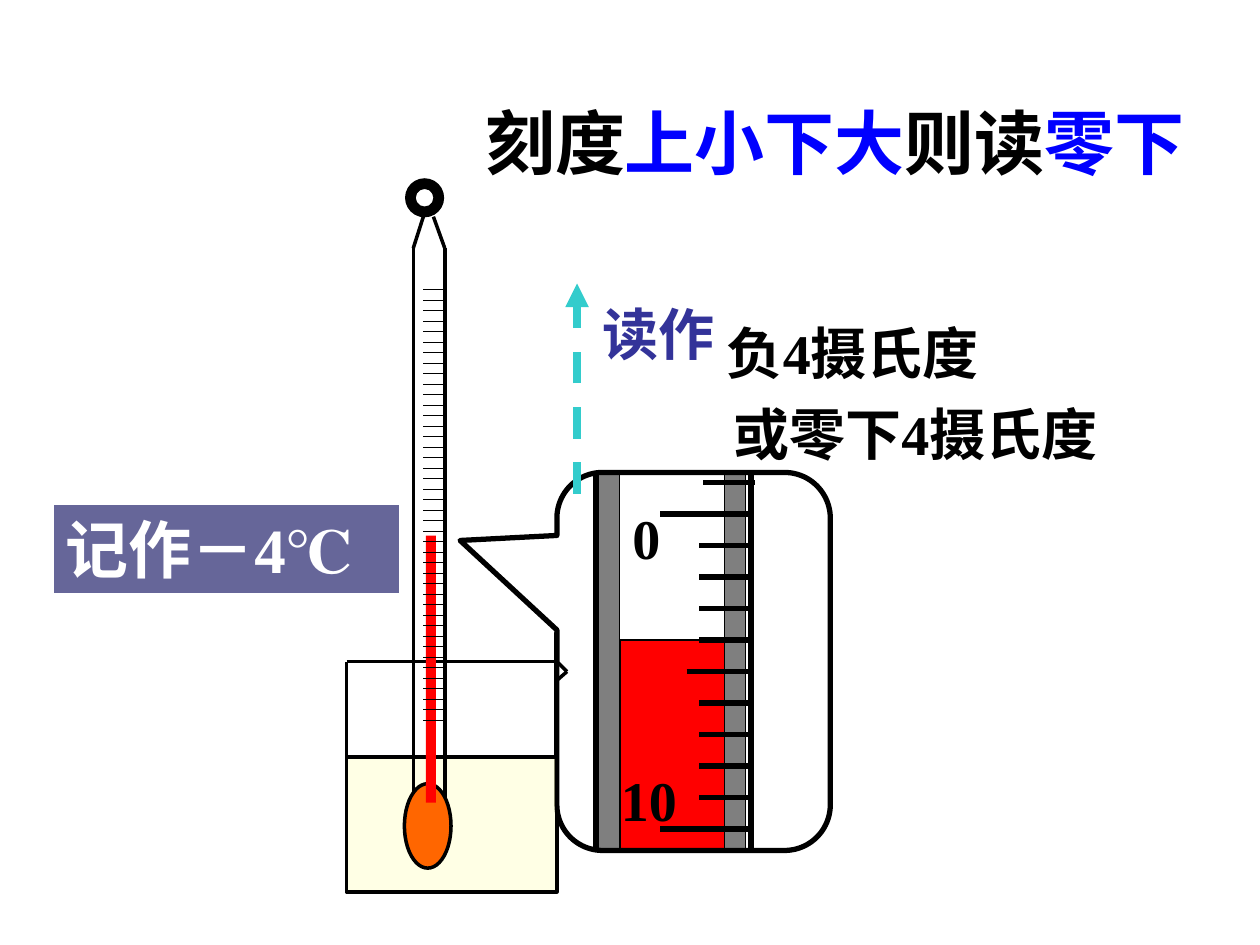
from dataclasses import dataclass

from lxml.etree import SubElement
from pptx import Presentation
from pptx.dml.color import RGBColor
from pptx.enum.dml import MSO_LINE_DASH_STYLE as DASH
from pptx.enum.shapes import MSO_CONNECTOR, MSO_SHAPE as SHAPE
from pptx.enum.text import MSO_ANCHOR as ANCHOR, MSO_AUTO_SIZE as AUTO, PP_ALIGN as ALIGN
from pptx.oxml.ns import qn
from pptx.util import Inches, Pt


@dataclass(frozen=True)
class Theme:
    font: str = "Times New Roman"
    black: str = "000000"
    white: str = "FFFFFF"
    blue: str = "0000FF"
    navy: str = "333399"
    slate: str = "666699"
    teal: str = "33CCCC"
    red: str = "FF0000"
    orange: str = "FF6600"
    cream: str = "FFFFCC"
    title: int = 40
    note: int = 36
    body: int = 32
    hair: float = 0.75
    thin: float = 2
    thick: float = 3
    arrow: float = 4.5


T = Theme()

TITLE = [("刻度", T.black), ("上小下大", T.blue), ("则读", T.black), ("零下", T.blue)]
NOTE = "记作－4℃"
SCALE_LABELS = [("0", (4.92, 3.95, 0.75, 0.63)), ("10", (4.83, 6.03, 1.17, 0.63))]
READINGS = [
    ("读作", T.navy, (4.68, 2.33, 1.48, 0.63)),
    ("负4摄氏度", T.black, (5.67, 2.48, 2.99, 0.63)),
    ("或零下4摄氏度", T.black, (5.72, 3.12, 3.93, 0.63)),
]

ZOOM_TOP, ZOOM_BOTTOM = 3.75, 6.74
ZOOM_ZERO, ZOOM_STEP, ZOOM_TICKS = 4.08, 0.25, 11
ZOOM_TICK, ZOOM_LEFT = 0.41, 5.55
LONG_TICKS = {0: 5.24, 5: 5.45, 10: 5.24}
EXTRA_TICKS = [3.75, 3.83]
WALLS = [4.75, 5.75]

BEAKER = [(2.75, 7.08), (2.75, 5.25), (4.42, 5.25), (4.5, 5.33), (4.42, 5.4)]
BEAKER_BASE = [(2.75, 7.08), (4.42, 7.08), (4.42, 5.4)]
TUBE = [
    [(3.36, 1.72), (3.28, 1.97), (3.28, 6.55)],
    [(3.44, 1.72), (3.53, 1.97), (3.53, 6.55)],
]
TUBE_TOP, TUBE_TICKS, TUBE_STEP = 2.3, 42, 1 / 12


def rgb(color):
    """Turn a hex string into a colour."""
    return RGBColor.from_string(color)


def add_shape(s, kind, box, fill=None, alpha=None, line=T.black, width=T.hair, adj=()):
    """Draw a preset shape without a shadow."""
    sp = s.shapes.add_shape(kind, *map(Inches, box))
    sp.shadow.inherit = False
    for i, value in enumerate(adj):
        sp.adjustments[i] = value
    if fill:
        sp.fill.solid()
        sp.fill.fore_color.rgb = rgb(fill)
    else:
        sp.fill.background()
    if alpha:
        clr = sp.fill._xPr.find(qn("a:solidFill")).find(qn("a:srgbClr"))
        SubElement(clr, qn("a:alpha")).set("val", str(alpha * 1000))
    if line:
        sp.line.color.rgb = rgb(line)
        sp.line.width = Pt(width)
    else:
        sp.line.fill.background()
    return sp


def add_line(s, start, end, color=T.black, width=T.hair, arrow=False):
    """Draw a straight line, dashed with an arrowhead on request."""
    cn = s.shapes.add_connector(MSO_CONNECTOR.STRAIGHT, *map(Inches, (*start, *end)))
    cn.line.color.rgb = rgb(color)
    cn.line.width = Pt(width)
    if arrow:
        cn.line.dash_style = DASH.DASH
        SubElement(cn.line._get_or_add_ln(), qn("a:tailEnd")).set("type", "triangle")
    SubElement(cn._element.spPr, qn("a:effectLst"))
    return cn


def add_chain(s, points, width):
    """Join successive points with lines."""
    for start, end in zip(points, points[1:]):
        add_line(s, start, end, width=width)


def write(sp, text, size=T.body, color=T.black, align=ALIGN.LEFT, anchor=ANCHOR.TOP, auto=AUTO.SHAPE_TO_FIT_TEXT):
    """Write a string or a list of (text, colour) runs into a shape."""
    tf = sp.text_frame
    tf.word_wrap = True
    tf.auto_size = auto
    tf.vertical_anchor = anchor
    p = tf.paragraphs[0]
    p.alignment = align
    for part, tint in [(text, color)] if isinstance(text, str) else text:
        r = p.add_run()
        r.text = part
        r.font.name = T.font
        r.font.size = Pt(size)
        r.font.bold = True
        r.font.color.rgb = rgb(tint)


def add_text(s, text, box, **fmt):
    """Add a text box with formatted text."""
    write(s.shapes.add_textbox(*map(Inches, box)), text, **fmt)


def draw_zoom(s):
    """Draw the magnified scale in its callout."""
    add_shape(s, SHAPE.RECTANGLE, (4.92, 5.08, 0.83, 1.67), fill=T.red)
    add_shape(s, SHAPE.ROUNDED_RECTANGULAR_CALLOUT, (4.42, ZOOM_TOP, 2.17, 3),
              width=T.thick, adj=(-0.854, -0.32, 0.167))
    for x in (4.73, 5.96):
        add_line(s, (x, ZOOM_TOP), (x, ZOOM_BOTTOM), width=T.thick)
    ticks = [(ZOOM_LEFT, ZOOM_ZERO + i * ZOOM_STEP) for i in range(ZOOM_TICKS)]
    ticks += [(x, ZOOM_ZERO + i * ZOOM_STEP) for i, x in LONG_TICKS.items()]
    ticks += [(5.58, y) for y in EXTRA_TICKS]
    for x, y in ticks:
        add_line(s, (x, y), (x + ZOOM_TICK, y), width=T.thick)
    for text, box in SCALE_LABELS:
        add_text(s, text, box)
    for x in WALLS:
        add_shape(s, SHAPE.RECTANGLE, (x, ZOOM_TOP, 0.17, 2.99), fill=T.black, alpha=50)


def draw_thermometer(s):
    """Draw the beaker and the thermometer standing in it."""
    add_chain(s, BEAKER, T.thin)
    add_chain(s, BEAKER_BASE, T.hair)
    add_shape(s, SHAPE.RECTANGLE, (2.75, 6.01, 1.67, 1.07), fill=T.cream, alpha=50, width=T.thin)
    for side in TUBE:
        add_chain(s, side, T.thin)
    add_shape(s, SHAPE.DONUT, (3.22, 1.42, 0.3, 0.3), fill=T.black, adj=(0.25,))
    add_shape(s, SHAPE.OVAL, (3.21, 6.22, 0.37, 0.67), fill=T.orange, width=T.thin)
    add_shape(s, SHAPE.RECTANGLE, (3.38, 4.25, 0.08, 2.12), fill=T.red, line=None)
    for i in range(TUBE_TICKS):
        y = TUBE_TOP + i * TUBE_STEP
        add_line(s, (3.36, y), (3.53, y))


def main():
    """Build the slide and save it."""
    prs = Presentation()
    prs.slide_width, prs.slide_height = Inches(10), Inches(7.5)
    s = prs.slides.add_slide(prs.slide_layouts[6])
    draw_zoom(s)
    draw_thermometer(s)
    note = add_shape(s, SHAPE.RECTANGLE, (0.42, 4, 2.75, 0.71), fill=T.slate, line=T.white)
    write(note, NOTE, size=T.note, color=T.white)
    add_line(s, (4.58, 3.92), (4.58, 2.25), color=T.teal, width=T.arrow, arrow=True)
    for text, color, box in READINGS:
        add_text(s, text, box, color=color)
    add_text(s, TITLE, (3.5, 0.5, 6.25, 1.25), size=T.title, align=ALIGN.CENTER,
             anchor=ANCHOR.MIDDLE, auto=AUTO.NONE)
    prs.save("out.pptx")


if __name__ == "__main__":
    main()
